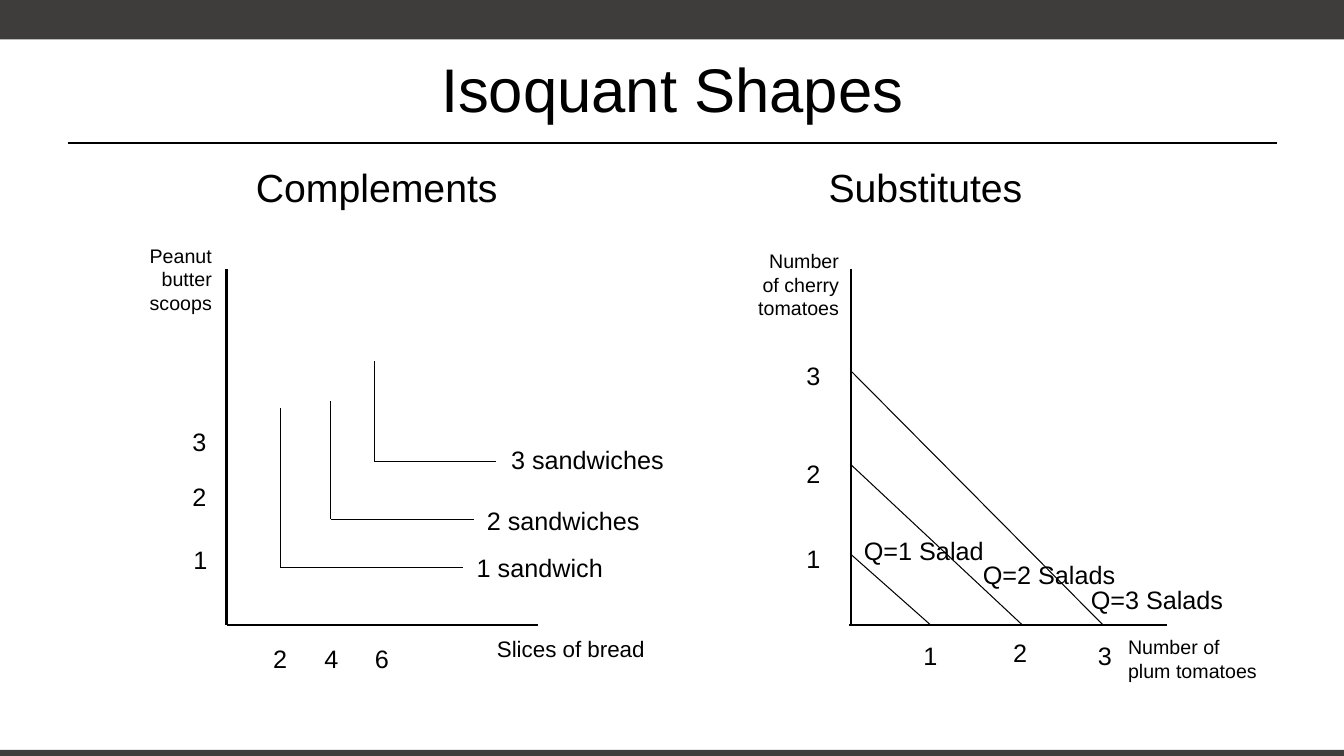
from dataclasses import dataclass

from lxml import etree
from pptx import Presentation
from pptx.dml.color import RGBColor
from pptx.enum.shapes import MSO_CONNECTOR, MSO_SHAPE
from pptx.enum.text import MSO_ANCHOR, PP_ALIGN
from pptx.oxml.ns import qn
from pptx.util import Inches, Pt

STRAIGHT = MSO_CONNECTOR.STRAIGHT
RECTANGLE = MSO_SHAPE.RECTANGLE
LEFT, CENTER, RIGHT = PP_ALIGN.LEFT, PP_ALIGN.CENTER, PP_ALIGN.RIGHT
TOP, MIDDLE = MSO_ANCHOR.TOP, MSO_ANCHOR.MIDDLE


@dataclass(frozen=True)
class Theme:
    font: str = "Arial"
    ink: RGBColor = RGBColor(0x00, 0x00, 0x00)
    bar: RGBColor = RGBColor(0x3E, 0x3D, 0x3C)
    title: int = 44
    heading: int = 28
    label: int = 18
    axis_name: int = 16
    small: int = 14
    axis_line: float = 2
    rule_line: float = 1.25
    curve_line: float = 0.75


THEME = Theme()


def add_bar(slide, top, height):
    shape = slide.shapes.add_shape(
        RECTANGLE, Inches(0), Inches(top), Inches(13.33), Inches(height))
    shape.shadow.inherit = False
    shape.fill.solid()
    shape.fill.fore_color.rgb = THEME.bar
    shape.line.fill.background()


def add_line(slide, start, end, width):
    connector = slide.shapes.add_connector(
        STRAIGHT, *(Inches(value) for value in (*start, *end)))
    connector.line.color.rgb = THEME.ink
    connector.line.width = Pt(width)
    etree.SubElement(connector._element.spPr, qn("a:effectLst"))


def add_text(slide, paragraphs, box, size, align=LEFT, anchor=TOP):
    """Each paragraph is a list of lines parted by line breaks."""
    shape = slide.shapes.add_textbox(*(Inches(value) for value in box))
    frame = shape.text_frame
    frame.word_wrap = True
    frame.vertical_anchor = anchor
    for index, lines in enumerate(paragraphs):
        paragraph = frame.add_paragraph() if index else frame.paragraphs[0]
        paragraph.alignment = align
        for number, line in enumerate(lines):
            if number:
                paragraph.add_line_break()
            run = paragraph.add_run()
            run.text = line
            run.font.name = THEME.font
            run.font.size = Pt(size)
            run.font.color.rgb = THEME.ink


def add_label(slide, text, left, top, width=1.85):
    add_text(slide, [[text]], (left, top, width, 0.4), THEME.label)


def add_ticks(slide, ticks):
    for text, left, top in ticks:
        add_label(slide, text, left, top, width=0.34)


def add_frame(slide):
    add_bar(slide, 0, 0.39)
    add_bar(slide, 7.44, 0.06)
    add_line(slide, (0.67, 1.42), (12.67, 1.42), THEME.rule_line)
    add_text(slide, [["Isoquant Shapes"]], (0.67, 0.25, 12, 1.25),
             THEME.title, CENTER, MIDDLE)


def add_complements(slide):
    add_text(slide, [["Complements"]], (2.44, 1.57, 2.74, 0.57), THEME.heading)

    # Axes and their names
    origin = (2.25, 6.2)
    add_line(slide, (2.25, 2.67), origin, THEME.axis_line)
    add_line(slide, origin, (5.34, 6.2), THEME.axis_line)
    add_text(slide, [["Peanut"], ["butter"], ["scoops"]],
             (1.08, 2.37, 1.12, 0.97), THEME.small, RIGHT)
    add_text(slide, [["Slices of bread"]],
             (4.83, 6.25, 1.79, 0.35), THEME.axis_name)

    # L-shaped isoquants: corner, top end, right end, label and its place
    isoquants = [
        ((2.78, 5.63), 4.05, 4.59, "1 sandwich", 4.63, 5.43),
        ((3.28, 5.15), 3.98, 4.7, "2 sandwiches", 4.73, 4.96),
        ((3.71, 4.58), 3.58, 4.92, "3 sandwiches", 4.97, 4.36),
    ]
    for corner, top, right, text, label_left, label_top in isoquants:
        add_line(slide, corner, (corner[0], top), THEME.curve_line)
        add_line(slide, corner, (right, corner[1]), THEME.curve_line)
        add_label(slide, text, label_left, label_top)

    # Axis values
    add_ticks(slide, [("3", 1.81, 4.18), ("2", 1.81, 4.73), ("1", 1.82, 5.35)])
    add_ticks(slide, [("2", 2.61, 6.33), ("4", 3.12, 6.33), ("6", 3.62, 6.33)])


def add_substitutes(slide):
    add_text(slide, [["Substitutes"]], (8.12, 1.57, 2.3, 0.57), THEME.heading)

    # Axes and their names
    add_line(slide, (8.44, 2.67), (8.44, 6.2), THEME.axis_line)
    add_line(slide, (8.42, 6.2), (11.57, 6.2), THEME.axis_line)
    add_text(slide, [["Number", "of cherry tomatoes"]],
             (7.15, 2.42, 1.27, 0.97), THEME.small, RIGHT)
    add_text(slide, [["Number of ", "plum tomatoes"]],
             (11.09, 6.25, 1.6, 0.61), THEME.small)

    # Straight isoquants: height on the axis, foot, label and its place
    isoquants = [
        (5.5, 9.23, "Q=1 Salad", 8.47, 5.26),
        (4.61, 10.14, "Q=2 Salads", 9.65, 5.5),
        (3.68, 10.94, "Q=3 Salads", 10.72, 5.75),
    ]
    for height, foot, text, label_left, label_top in isoquants:
        add_line(slide, (8.44, height), (foot, 6.2), THEME.curve_line)
        add_label(slide, text, label_left, label_top)

    # Axis values
    add_ticks(slide, [("3", 7.9, 3.53), ("2", 7.9, 4.5), ("1", 7.9, 5.34)])
    add_ticks(slide, [("1", 9.06, 6.3), ("2", 9.95, 6.27), ("3", 10.79, 6.3)])


def main():
    presentation = Presentation()
    presentation.slide_width = Inches(13.33)
    presentation.slide_height = Inches(7.5)
    slide = presentation.slides.add_slide(presentation.slide_layouts[6])
    add_frame(slide)
    add_complements(slide)
    add_substitutes(slide)
    presentation.save("out.pptx")


if __name__ == "__main__":
    main()
